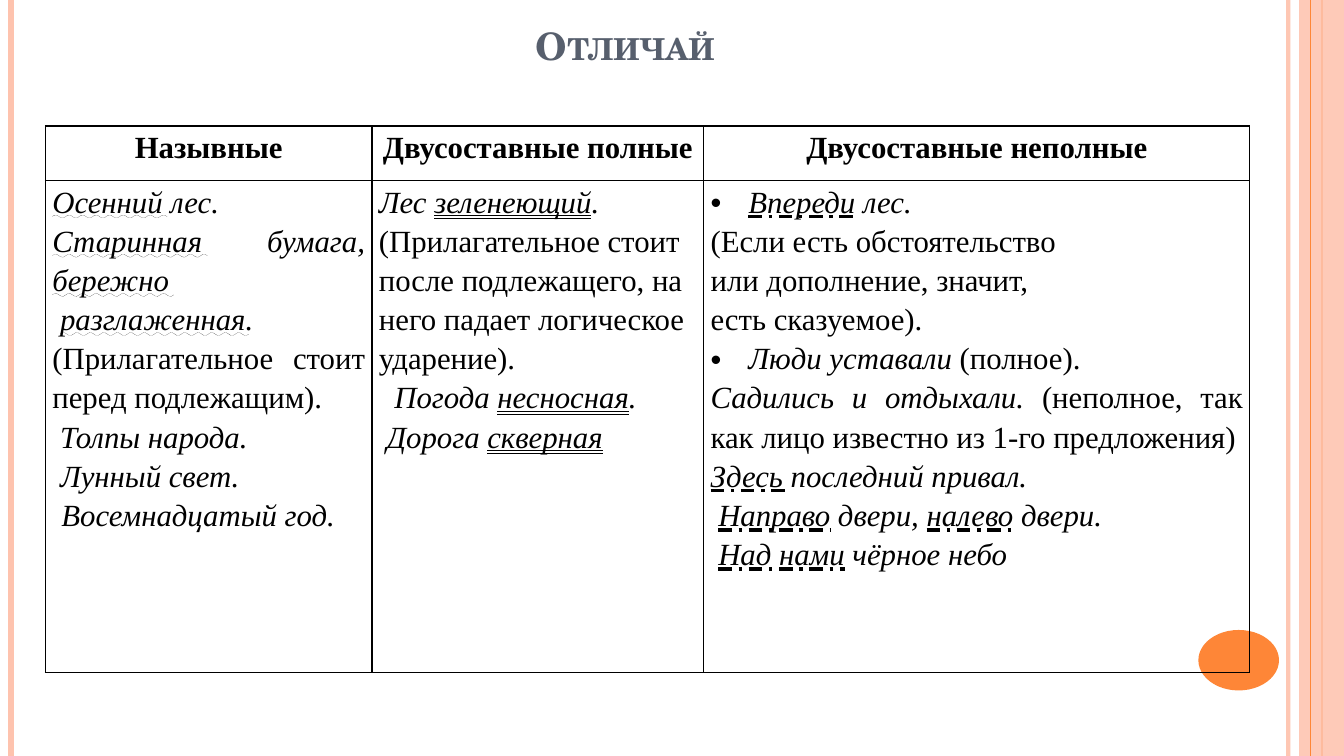
from dataclasses import dataclass
from lxml.etree import SubElement
from pptx import Presentation
from pptx.dml.color import RGBColor
from pptx.enum.shapes import MSO_CONNECTOR, MSO_SHAPE
from pptx.enum.text import MSO_ANCHOR, MSO_UNDERLINE, PP_ALIGN
from pptx.oxml.ns import qn
from pptx.util import Pt


@dataclass(frozen=True)
class Theme:
    peach: RGBColor = RGBColor.from_string("FEC3AE")
    orange: RGBColor = RGBColor.from_string("FE8637")
    slate: RGBColor = RGBColor.from_string("575F6D")
    black: RGBColor = RGBColor.from_string("000000")
    head: str = "TeX Gyre Schola"
    body: str = "Times New Roman"
    big: int = 27
    text: int = 22


THEME = Theme()
WIDE, HIGH = 960, 540
LEFT, MID, JUST = PP_ALIGN.LEFT, PP_ALIGN.CENTER, PP_ALIGN.JUSTIFY
COLS = [
    ("Назывные", 233.3, MSO_UNDERLINE.WAVY_LINE, [
        ("_Осенний| лес.", 0, JUST),
        ("_Старинная| бумага, |_бережно", 0, JUST),
        ("_разглаженная|.", 5.5, JUST),
        ("=(Прилагательное стоит перед подлежащим).", 0, JUST),
        ("Толпы народа.", 5.5, LEFT),
        ("Лунный свет.", 5.5, LEFT),
        ("Восемнадцатый год.", 6.5, JUST),
    ]),
    ("Двусоставные полные", 236.9, MSO_UNDERLINE.DOUBLE_LINE, [
        ("Лес |_зеленеющий|.", 0, JUST),
        ("=(Прилагательное стоит после подлежащего, "
         "на него падает логическое ударение).", 0, LEFT),
        ("Погода |_несносная|.", 11, LEFT),
        ("Дорога |_скверная", 5.5, JUST),
    ]),
    ("Двусоставные неполные", 390.2, MSO_UNDERLINE.DOT_DASH_HEAVY_LINE, [
        ("•_Впереди| лес.", 27, JUST),
        ("=(Если есть обстоятельство", 0, JUST),
        ("=или дополнение, значит,", 0, JUST),
        ("=есть сказуемое).", 0, JUST),
        ("•Люди уставали|= (полное).", 27, JUST),
        ("Садились и отдыхали.|= (неполное, так как лицо "
         "известно из 1-го предложения)", 0, JUST),
        ("_Здесь |последний привал.", 0, LEFT),
        ("_Направо| двери, |_налево| двери.", 5.5, LEFT),
        ("_Над нами| чёрное небо", 5.5, JUST),
    ]),
]


def fade(fill, share):
    tint = fill.find(".//" + qn("a:srgbClr"))
    SubElement(tint, qn("a:alpha"), val=str(share * 1000))


def rule(slide, x, top, high, tint, thick, share=100):
    line = slide.shapes.add_connector(
        MSO_CONNECTOR.STRAIGHT, Pt(x), Pt(top), Pt(x), Pt(top + high))
    line.line.color.rgb = tint
    line.line.width = Pt(thick)
    SubElement(line._element.spPr, qn("a:effectLst"))
    if share < 100:
        fade(line._element.spPr, share)


def block(slide, kind, box, tint, share=100):
    shape = slide.shapes.add_shape(kind, *map(Pt, box))
    shape.shadow.inherit = False
    shape.fill.solid()
    shape.fill.fore_color.rgb = tint
    shape.line.fill.background()
    if share < 100:
        fade(shape._element.spPr, share)


def add_frame(slide, box):
    x, y, wide, high = box
    edge = x + wide
    rule(slide, edge - 39.8, y, high, THEME.peach, 3, 93)
    rule(slide, x + 8, y, high, THEME.peach, 4.5)
    rule(slide, edge - 16, y, high, THEME.orange, 1.5)
    block(slide, MSO_SHAPE.RECTANGLE, (edge - 32, y, 32, high), THEME.peach, 87)
    rule(slide, edge - 24, y, high, THEME.orange, 0.75)
    block(slide, MSO_SHAPE.OVAL,
          (edge - 104, y + high - 90, 57.6, 43.2), THEME.orange)


def style(par, face, size, tint, bold=False):
    font = par.font
    font.name, font.size, font.bold = face, Pt(size), bold
    font.color.rgb = tint


def add_title(slide, box):
    title = slide.shapes.title
    title.left, title.top, title.width, title.height = map(Pt, box)
    frame = title.text_frame
    frame.vertical_anchor = MSO_ANCHOR.BOTTOM
    par = frame.paragraphs[0]
    par.alignment = MID
    run = par.add_run()
    run.text = "Отличай"
    run._r.get_or_add_rPr().set("cap", "small")
    style(par, THEME.head, THEME.big, THEME.slate, True)


def set_cell(cell):
    cell.margin_left = cell.margin_right = Pt(5)
    cell.margin_top = cell.margin_bottom = 0
    props = cell._tc.get_or_add_tcPr()
    for side in ("lnL", "lnR", "lnT", "lnB"):
        line = SubElement(props, qn("a:" + side), w=str(Pt(1)))
        fill = SubElement(line, qn("a:solidFill"))
        SubElement(fill, qn("a:srgbClr"), val=str(THEME.black))
    cell.fill.background()


def fill_par(par, text, indent, align, under):
    par.alignment = align
    par.line_spacing = 1.15
    props = par._p.get_or_add_pPr()
    props.set("marL", str(Pt(indent)))
    if text.startswith("•"):
        props.set("indent", str(-Pt(indent)))
        SubElement(props, qn("a:buFont"), typeface="Arial")
        SubElement(props, qn("a:buChar"), char="•")
    style(par, THEME.body, THEME.text, THEME.black)
    for part in text.lstrip("•").split("|"):
        run = par.add_run()
        run.text = part.lstrip("_=")
        run.font.italic = not part.startswith("=")
        if part.startswith("_"):
            run.font.underline = under


def add_grid(slide, box):
    grid = slide.shapes.add_table(2, len(COLS), *map(Pt, box)).table
    grid.first_row = grid.horz_banding = False
    grid.rows[0].height = Pt(39)
    grid.rows[1].height = Pt(box[3] - 39)
    for col, (name, wide, under, lines) in enumerate(COLS):
        grid.columns[col].width = Pt(wide)
        head, body = grid.cell(0, col), grid.cell(1, col)
        set_cell(head)
        set_cell(body)
        par = head.text_frame.paragraphs[0]
        par.text = name
        par.alignment = MID
        par.line_spacing = 1.15
        style(par, THEME.body, THEME.text, THEME.black, True)
        frame = body.text_frame
        for row, line in enumerate(lines):
            par = frame.add_paragraph() if row else frame.paragraphs[0]
            fill_par(par, *line, under)


def main():
    deck = Presentation()
    deck.slide_width, deck.slide_height = Pt(WIDE), Pt(HIGH)
    slide = deck.slides.add_slide(deck.slide_layouts[5])
    add_frame(slide, (0, 0, WIDE, HIGH))
    add_title(slide, (54.7, 20, 784, 32.4))
    add_grid(slide, (32.4, 90, 860.4, 390.2))
    deck.save("out.pptx")


if __name__ == "__main__":
    main()
